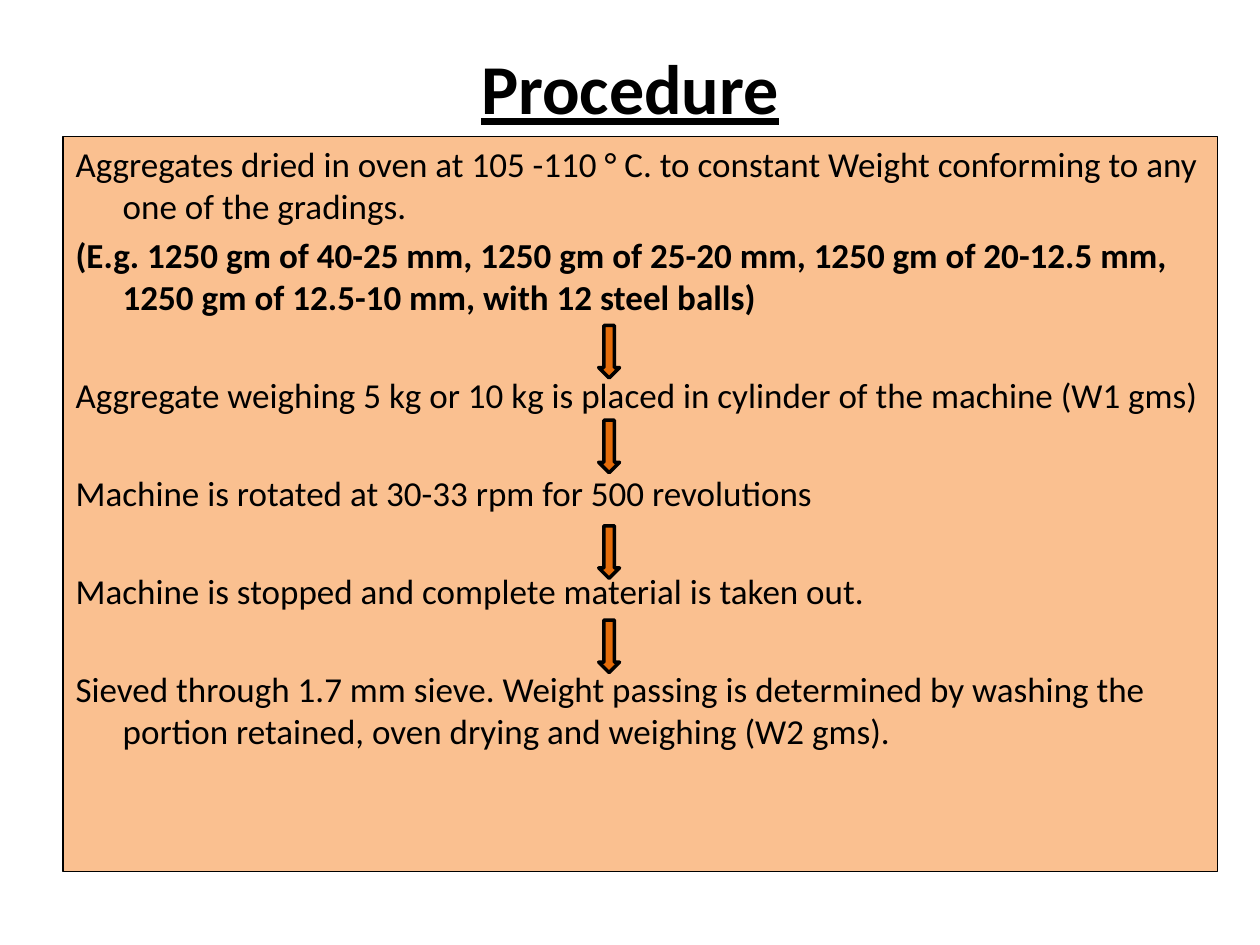
from lxml.etree import SubElement
from pptx import Presentation
from pptx.dml.color import RGBColor
from pptx.enum.shapes import MSO_SHAPE as Shape
from pptx.enum.text import MSO_ANCHOR as Anchor, MSO_AUTO_SIZE as Fit, PP_ALIGN as Align
from pptx.oxml.ns import qn
from pptx.util import Cm, Pt

COLORS = {"text": "000000", "panel": "FAC090", "arrow": "E46C0A", "line": "000000"}
FONT = "Calibri"
HANG = 0.95
# Each step: text, bold, space before in points
STEPS = [
    ("Aggregates dried in oven at 105 -110 ° C. to constant Weight conforming "
     "to any one of the gradings.", False, 0),
    ("(E.g. 1250 gm of 40-25 mm, 1250 gm of 25-20 mm, 1250 gm of 20-12.5 mm, "
     "1250 gm of 12.5-10 mm, with 12 steel balls)", True, 4),
    ("Aggregate weighing 5 kg or 10 kg is placed in cylinder of the machine "
     "(W1 gms)", False, 32),
    ("Machine is rotated at 30-33 rpm for 500 revolutions", False, 32),
    ("Machine is stopped and complete material is taken out.", False, 32),
    ("Sieved through 1.7 mm sieve. Weight passing is determined by washing the "
     "portion retained, oven drying and weighing (W2 gms).", False, 32),
]
ARROW_TOPS = [3.81, 5.72, 7.85, 9.75]  # below the panel's top edge


def color(name):
    return RGBColor.from_string(COLORS[name])


def place(shape, box):
    shape.left, shape.top, shape.width, shape.height = map(Cm, box)


def paint(shape, fill, width):
    shape.fill.solid()
    shape.fill.fore_color.rgb = color(fill)
    shape.line.color.rgb = color("line")
    shape.line.width = Pt(width)


def add_run(para, text, size, bold):
    run = para.add_run()
    run.text = text
    font = run.font
    font.name, font.size, font.bold = FONT, Pt(size), bold
    font.color.rgb = color("text")
    return run


def add_title(slide, box):
    title = slide.shapes.title
    place(title, box)
    frame = title.text_frame
    frame.auto_size = Fit.NONE
    frame.vertical_anchor = Anchor.MIDDLE
    para = frame.paragraphs[0]
    para.alignment = Align.CENTER
    add_run(para, "Procedure", 40, True).font.underline = True


def add_steps(slide, box):
    panel = slide.placeholders[1]
    place(panel, box)
    paint(panel, "panel", 0.75)
    frame = panel.text_frame
    frame.auto_size = Fit.NONE
    frame.vertical_anchor = Anchor.TOP
    for i, (text, bold, gap) in enumerate(STEPS):
        para = frame.add_paragraph() if i else frame.paragraphs[0]
        props = para._p.get_or_add_pPr()
        props.set("marL", str(Cm(HANG)))
        props.set("indent", str(-Cm(HANG)))
        SubElement(props, qn("a:buNone"))
        para.space_before = Pt(gap)
        add_run(para, text, 20, bold)


def add_arrows(slide, box):
    left, top = box[:2]
    for drop in ARROW_TOPS:
        arrow = slide.shapes.add_shape(
            Shape.DOWN_ARROW, Cm(left + 10.8), Cm(top + drop), Cm(0.42), Cm(1.06))
        arrow.shadow.inherit = False
        paint(arrow, "arrow", 2)


def main():
    deck = Presentation()
    deck.slide_width, deck.slide_height = Cm(25.4), Cm(19.05)
    slide = deck.slides.add_slide(deck.slide_layouts[1])
    panel = (1.27, 2.75, 23.28, 14.82)
    add_title(slide, (1.27, 0.76, 22.86, 1.98))
    add_steps(slide, panel)
    add_arrows(slide, panel)
    deck.save("out.pptx")


if __name__ == "__main__":
    main()
